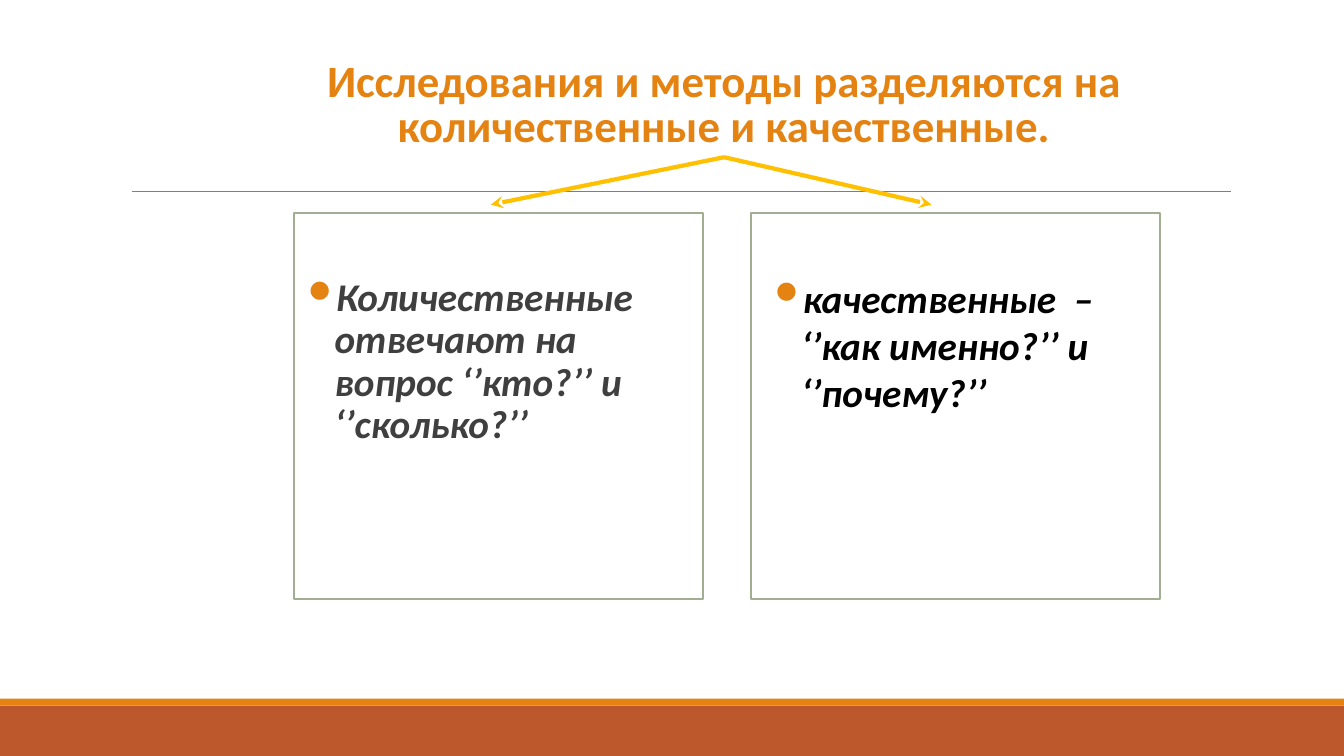
import pptx
import pptx.util
import pptx.dml.color
import pptx.enum.shapes
import pptx.enum.text
import pptx.oxml
from pptx.oxml.ns import nsdecls

Pt = pptx.util.Pt
SHAPES = pptx.enum.shapes.MSO_SHAPE
ALIGN = pptx.enum.text.PP_ALIGN
ANCHOR = pptx.enum.text.MSO_ANCHOR
STRAIGHT = pptx.enum.shapes.MSO_CONNECTOR.STRAIGHT

COLOURS = {
    "background": "FFFFFF",
    "accent": "E48312",
    "band": "BD582C",
    "rule": "7F7F7F",
    "border": "A1AE91",
    "arrow": "FFC000",
    "quantitative": "3F3F3F",
    "qualitative": "000000",
}
WIDTH, HEIGHT = 960, 540


def colour(name):
    """Return the named colour."""
    return pptx.dml.color.RGBColor.from_string(COLOURS[name])


def apply(target, values):
    """Set each attribute of the target from a dict of values."""
    for key, value in values.items():
        setattr(target, key, value)


def write(frame, text, ink, frame_format, paragraph_format, italic=False):
    """Write one formatted paragraph and return it."""
    apply(frame, {"word_wrap": True, **frame_format})
    paragraph = frame.paragraphs[0]
    apply(paragraph, paragraph_format)
    run = paragraph.add_run()
    run.text = text
    apply(run.font, {"name": "Calibri", "bold": True, "italic": italic})
    run.font.color.rgb = colour(ink)
    return run


def add_line(slide, start, end, ink, weight):
    """Draw a straight line without a shadow."""
    line = slide.shapes.add_connector(STRAIGHT, *map(Pt, (*start, *end)))
    line.line.color.rgb = colour(ink)
    line.line.width = Pt(weight)
    line._element.spPr.append(pptx.oxml.parse_xml(f"<a:effectLst {nsdecls('a')}/>"))
    return line


def add_footer(slide, left, top, width, height):
    """Draw the footer band under its thin accent stripe."""
    stripe = 5
    for ink, y, depth in (("band", top + stripe, height - stripe), ("accent", top, stripe)):
        strip = slide.shapes.add_shape(SHAPES.RECTANGLE, *map(Pt, (left, y, width, depth)))
        strip.shadow.inherit = False
        strip.fill.solid()
        strip.fill.fore_color.rgb = colour(ink)
        strip.line.fill.background()


def add_heading(slide, left, top, width, height, text):
    """Place the centred title in its box."""
    heading = slide.shapes.title
    apply(heading, {"left": Pt(left), "top": Pt(top), "width": Pt(width), "height": Pt(height)})
    run = write(
        heading.text_frame, text, "accent",
        {"vertical_anchor": ANCHOR.BOTTOM, "auto_size": pptx.enum.text.MSO_AUTO_SIZE.NONE},
        {"alignment": ALIGN.CENTER, "line_spacing": 0.85},
    )
    run.font.size = Pt(32)
    return heading


def add_card(slide, left, top, width, height, text, ink, inset, inset_top, spacing):
    """Draw a bordered card holding one bulleted statement."""
    card = slide.shapes.add_shape(SHAPES.RECTANGLE, *map(Pt, (left, top, width, height)))
    card.shadow.inherit = False
    card.fill.background()
    card.line.color.rgb = colour("border")
    card.line.width = Pt(1.5)
    run = write(
        card.text_frame, text, ink,
        {"vertical_anchor": ANCHOR.TOP, "margin_left": Pt(inset),
         "margin_right": Pt(inset), "margin_top": Pt(inset_top)},
        {"alignment": ALIGN.LEFT, "line_spacing": spacing},
        italic=True,
    )
    run.font.size = Pt(28)
    properties = card.text_frame.paragraphs[0]._p.get_or_add_pPr()
    properties.set("marL", str(Pt(28.8)))
    properties.set("indent", str(Pt(-22.3)))
    for bullet in (
        f'<a:buClr {nsdecls("a")}><a:srgbClr val="{COLOURS["accent"]}"/></a:buClr>',
        f'<a:buChar {nsdecls("a")} char="⚫"/>',
    ):
        properties.append(pptx.oxml.parse_xml(bullet))


def add_branches(slide, heading, left, top, width, height, apex):
    """Draw arrows from the heading down to both lower corners of the box."""
    for x in (left, left + width):
        branch = add_line(slide, (apex, top), (x, top + height), "arrow", 3)
        branch.begin_connect(heading, 2)
        branch.line._get_or_add_ln().append(
            pptx.oxml.parse_xml(f'<a:tailEnd {nsdecls("a")} type="stealth"/>'))


def main():
    """Build and save the slide."""
    deck = pptx.Presentation()
    apply(deck, {"slide_width": Pt(WIDTH), "slide_height": Pt(HEIGHT)})
    slide = deck.slides.add_slide(deck.slide_layouts.get_by_name("Title Only"))
    slide.background.fill.solid()
    slide.background.fill.fore_color.rgb = colour("background")

    add_footer(slide, 0, 499, WIDTH, 41)
    add_line(slide, (94.3, 136.8), (879, 136.8), "rule", 0.75)
    heading = add_heading(
        slide, 204.4, 22.3, 625.7, 90,
        "Исследования и методы разделяются на количественные и качественные.")
    statements = (
        ("Количественные отвечают на вопрос ‘’кто?’’ и ‘’сколько?’’",
         "quantitative", 0, 46.4, 0.9),
        ("качественные  – ‘’как именно?’’ и ‘’почему?’’",
         "qualitative", 7.2, 43.8, 1.0),
    )
    card_width, gap = 292.3, 34
    for column, statement in enumerate(statements):
        add_card(slide, 210.2 + column * (card_width + gap), 152, card_width, 275.6, *statement)
    add_branches(slide, heading, 350.6, 112.3, 314.7, 33.9, 517.25)
    deck.save("out.pptx")


if __name__ == "__main__":
    main()
